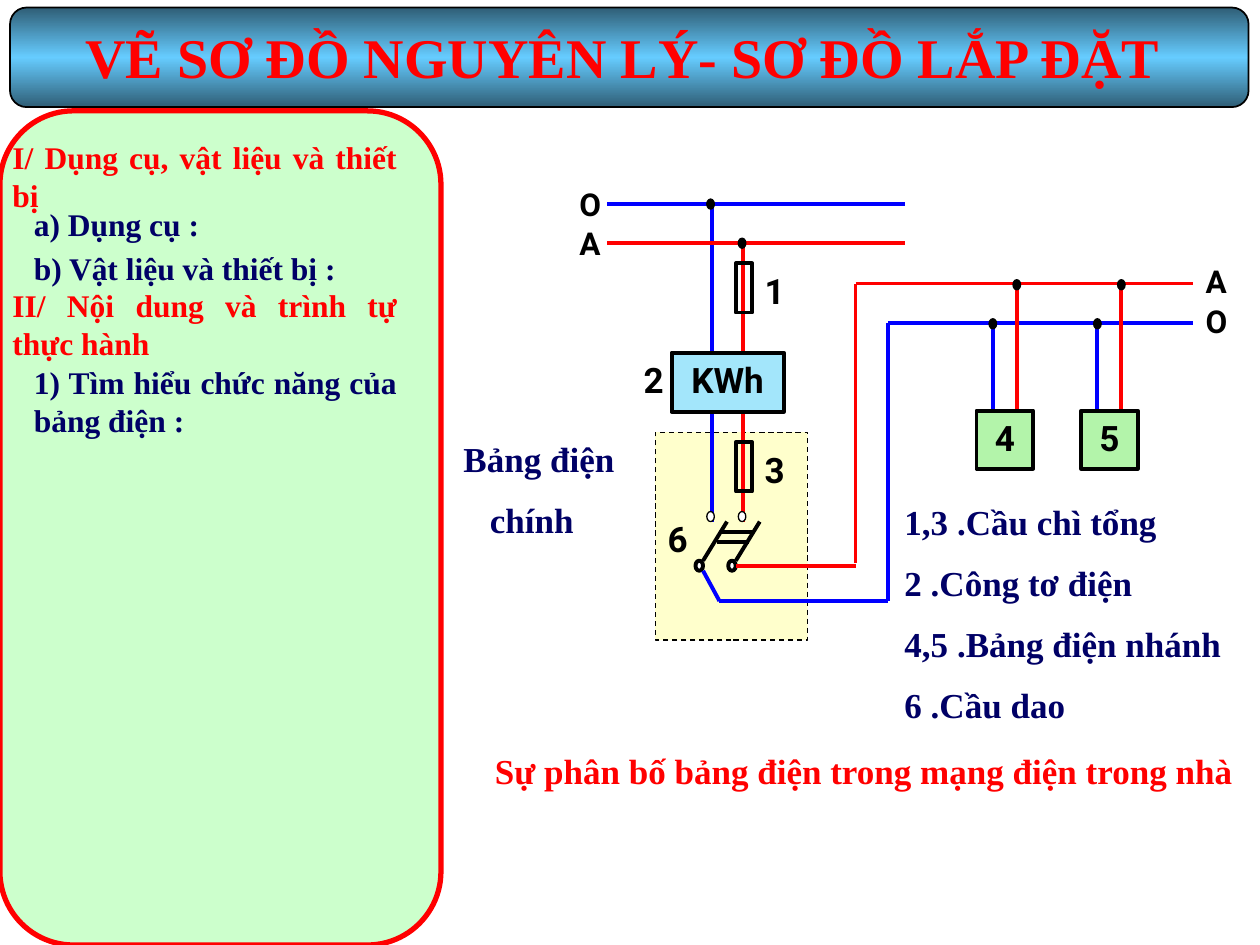
from copy import deepcopy
from itertools import pairwise

from pptx import Presentation
from pptx.dml.color import RGBColor
from pptx.enum.dml import MSO_LINE
from pptx.enum.shapes import MSO_CONNECTOR, MSO_SHAPE
from pptx.enum.text import MSO_ANCHOR, PP_ALIGN
from pptx.oxml.ns import qn
from pptx.oxml.xmlchemy import OxmlElement
from pptx.util import Inches, Pt

RECTANGLE, ROUNDED, OVAL = MSO_SHAPE.RECTANGLE, MSO_SHAPE.ROUNDED_RECTANGLE, MSO_SHAPE.OVAL
STRAIGHT, DASH = MSO_CONNECTOR.STRAIGHT, MSO_LINE.DASH
LEFT, CENTER, JUSTIFY = PP_ALIGN.LEFT, PP_ALIGN.CENTER, PP_ALIGN.JUSTIFY

COLUMNS, ROWS = 100, 75
COLORS = {
    "black": "000000", "white": "FFFFFF", "red": "FF0000", "blue": "0000FF",
    "navy": "000066", "mint": "CCFFCC", "cream": "FFFFCC", "sky": "A3E6FB",
    "green": "B3F4AA", "banner edge": "2F5E76", "banner middle": "66CCFF",
}
SERIF, SANS = "Times New Roman", "Roboto"
THIN, THICK = 0.75, 2.25
FRAME_FORMAT = {
    "word_wrap": True, "vertical_anchor": MSO_ANCHOR.TOP,
    "margin_left": Inches(0.1), "margin_right": Inches(0.1),
    "margin_top": Inches(0.05), "margin_bottom": Inches(0.05),
}


def color(name):
    return RGBColor.from_string(COLORS[name])


class Diagram:
    """Draws on one slide; all lengths are grid columns and rows."""

    def __init__(self, presentation):
        self.slide = presentation.slides.add_slide(presentation.slide_layouts[6])
        self.column = presentation.slide_width / COLUMNS
        self.row = presentation.slide_height / ROWS

    def place(self, left, top, width, height):
        return (round(left * self.column), round(top * self.row),
                round(width * self.column), round(height * self.row))

    def box(self, at, fill=None, line="black", width=THICK, kind=RECTANGLE, dash=None):
        shape = self.slide.shapes.add_shape(kind, *self.place(*at))
        shape.shadow.inherit = False
        if fill:
            shape.fill.solid()
            shape.fill.fore_color.rgb = color(fill)
        else:
            shape.fill.background()
        if line:
            shape.line.color.rgb = color(line)
            shape.line.width = Pt(width)
            if dash:
                shape.line.dash_style = dash
        else:
            shape.line.fill.background()
        return shape

    def banner(self, at, edge, middle):
        """Rounded bar whose vertical gradient is brightest halfway down."""
        shape = self.box(at, width=1, kind=ROUNDED)
        shape.fill.gradient()
        shape.fill.gradient_angle = 90
        stops = shape.fill.gradient_stops
        for stop, name, position in zip(stops, (edge, middle), (0, 0.5)):
            stop.color.rgb = color(name)
            stop.position = position
        stop_list = next(shape._element.spPr.iter(qn("a:gsLst")))
        last = deepcopy(stop_list[0])
        last.set("pos", "100000")
        stop_list.append(last)

    def circle(self, x, y, fill="black", width=THIN):
        self.box((x - 0.3, y - 0.4, 0.6, 0.8), fill, width=width, kind=OVAL)

    def wire(self, name, *points):
        for start, end in pairwise(points):
            ends = self.place(*start, *end)
            connector = self.slide.shapes.add_connector(STRAIGHT, *ends)
            connector.line.color.rgb = color(name)
            connector.line.width = Pt(THICK)
            connector._element.spPr.append(OxmlElement("a:effectLst"))

    def label(self, shape, lines, name="black", size=20, font=SANS, align=LEFT, indents=None):
        """Fill a shape with paragraphs; indents maps a line number to columns."""
        frame = shape.text_frame
        for key, value in FRAME_FORMAT.items():
            setattr(frame, key, value)
        font_format = {"name": font, "size": Pt(size), "bold": True}
        for number, line in enumerate(lines):
            paragraph = frame.paragraphs[0] if number == 0 else frame.add_paragraph()
            paragraph.alignment = align
            paragraph.space_before = Pt(size * 0.55 if number else 0)
            indent = (indents or {}).get(number)
            if indent:
                paragraph._p.get_or_add_pPr().set("marL", str(round(indent * self.column)))
            run = paragraph.add_run()
            run.text = line
            for key, value in font_format.items():
                setattr(run.font, key, value)
            run.font.color.rgb = color(name)

    def text(self, at, *lines, **style):
        self.label(self.slide.shapes.add_textbox(*self.place(*at)), lines, **style)


def draw_outline(diagram):
    diagram.banner((0.8, 0.6, 98.3, 7.9), "banner edge", "banner middle")
    diagram.box((0, 8.8, 35, 66.2), "mint", "red", 3, ROUNDED)
    headings = [
        ((0, 10.5, 32.5, 7), "I/ Dụng cụ, vật liệu và thiết bị", "red", JUSTIFY),
        ((1.7, 15.8, 21.7, 4), "a) Dụng cụ :", "navy", LEFT),
        ((1.7, 19.3, 26.7, 4), "b) Vật liệu và thiết bị :", "navy", LEFT),
        ((0, 22.2, 32.5, 7), "II/ Nội dung và trình tự thực hành", "red", JUSTIFY),
        ((1.7, 28.3, 30.8, 7), "1) Tìm hiểu chức năng của bảng điện :", "navy", JUSTIFY),
    ]
    for at, line, name, align in headings:
        diagram.text(at, line, name=name, size=18, font=SERIF, align=align)


def draw_circuit(diagram):
    neutral_x, live_x = 56.5, 59
    supply = {"blue": 16.2, "red": 19.3}
    output = {"blue": 25.6, "red": 22.5}
    boards = {"4": 77.5, "5": 85.8}
    drops = {"blue": 1.3, "red": 3.2}

    diagram.box((52, 34.3, 12.1, 16.5), "cream", width=THIN, dash=DASH)
    for name, x in (("blue", neutral_x), ("red", live_x)):
        y = supply[name]
        diagram.wire(name, (48.2, y), (71.8, y))
        diagram.wire(name, (x, y), (x, 28))
        diagram.wire(name, (x, 32.7), (x, 41.4))
        diagram.circle(x - 0.1, y)
        diagram.circle(x - 0.1, 41, "white")
    for y in (20.9, 35.1):
        diagram.box((58.4, y, 1.3, 3.9))
    meter = diagram.box((53.3, 28, 8.9, 4.7), "sky")
    diagram.label(meter, ["KWh"], align=CENTER)

    for x in (55.8, 58.4):
        diagram.wire("black", (x, 44.5), (x + 1.9, 41.4))
        diagram.circle(x - 0.3, 44.9, "white", THICK)
    for x, y in ((57.2, 42.2), (56.9, 43)):
        diagram.wire("black", (x, y), (x + 2.55, y))

    diagram.wire("red", (58.4, 44.9), (67.9, 44.9))
    diagram.wire("red", (67.9, 44.7), (67.9, output["red"]), (94.7, output["red"]))
    diagram.wire("blue", (55.8, 45.3), (57.1, 47.7), (70.5, 47.7),
                 (70.5, output["blue"]), (94.7, output["blue"]))
    for number, left in boards.items():
        for name, offset in drops.items():
            x = left + offset
            diagram.wire(name, (x, output[name]), (x, 32.7))
            diagram.circle(x, output[name] + 0.1)
        board = diagram.box((left, 32.6, 4.5, 4.6), "green")
        diagram.label(board, [number], align=CENTER)

    for number, x, y in (("1", 59.7, 20.9), ("2", 50.1, 28), ("3", 59.7, 35.1), ("6", 52, 40.6)):
        diagram.text((x, y, 3.8, 4.3), number)
    for letter, x, y in (("O", 45, 14.2), ("A", 45, 17.3), ("A", 94.7, 20.3), ("O", 94.7, 23.5)):
        diagram.text((x, y, 4.5, 4), letter, size=18)


def draw_captions(diagram):
    diagram.text((38.3, 59, 68.3, 4.3), "Sự phân bố bảng điện trong mạng điện trong nhà",
                 name="red", font=SERIF)
    main_board = diagram.box((35.8, 34.2, 14.2, 9.3), "white", None)
    diagram.label(main_board, ["Bảng điện", "chính"], name="navy", font=SERIF,
                  align=JUSTIFY, indents={1: 2.1})
    diagram.text((70.8, 39.2, 29.2, 19.3), "1,3 .Cầu chì tổng", "2 .Công tơ điện",
                 "4,5 .Bảng điện nhánh", "6 .Cầu dao", name="navy", font=SERIF)
    diagram.text((2.5, 1.3, 98.3, 6.3), "VẼ SƠ ĐỒ NGUYÊN LÝ- SƠ ĐỒ LẮP ĐẶT",
                 name="red", size=32, font=SERIF, align=JUSTIFY, indents={0: 3.3})


def main():
    presentation = Presentation()
    presentation.slide_width, presentation.slide_height = Inches(10), Inches(7.5)
    diagram = Diagram(presentation)
    draw_outline(diagram)
    draw_circuit(diagram)
    draw_captions(diagram)
    presentation.save("out.pptx")


if __name__ == "__main__":
    main()
